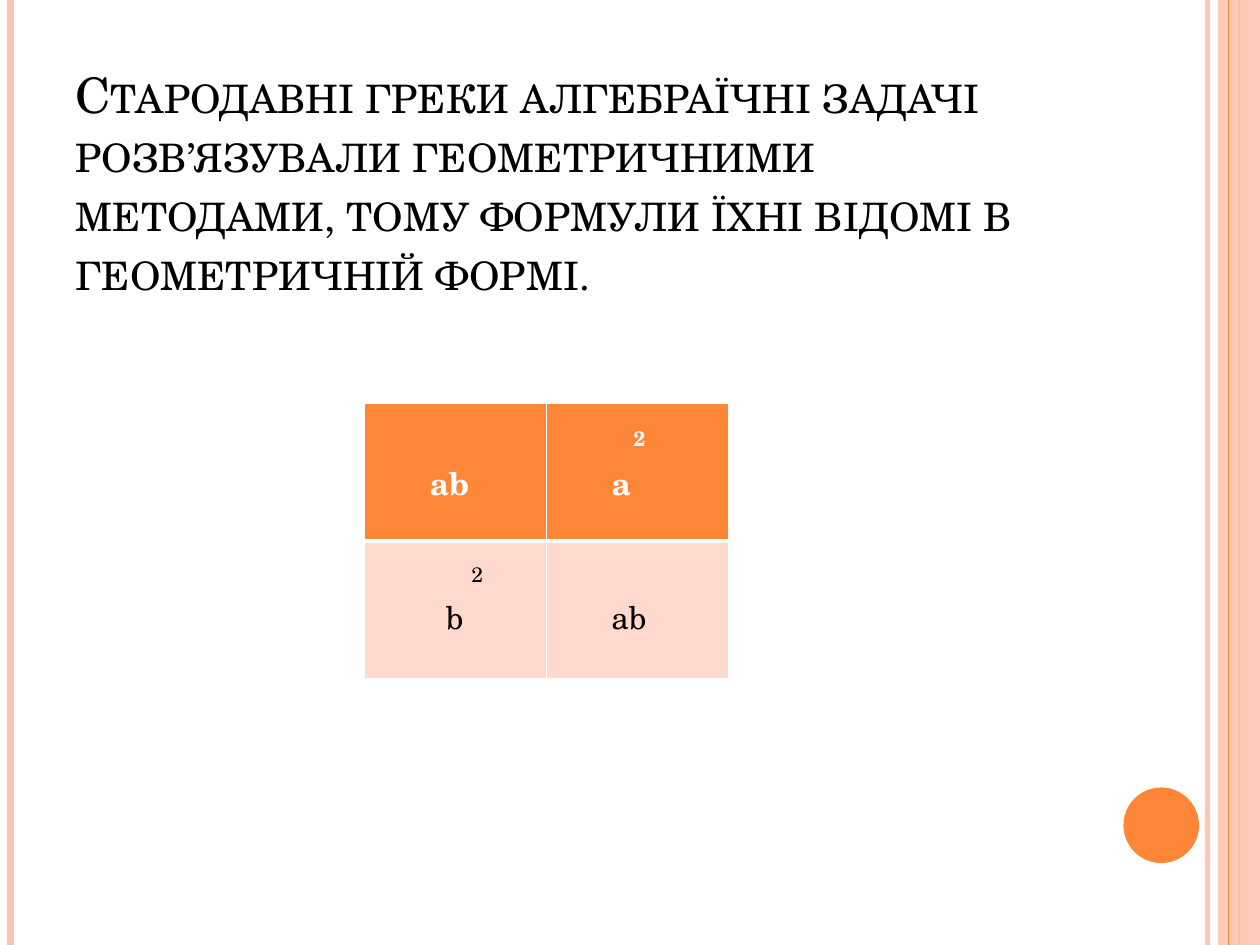
from dataclasses import dataclass

from lxml.etree import SubElement
from pptx import Presentation
from pptx.dml.color import RGBColor
from pptx.enum.shapes import MSO_CONNECTOR as Connector, MSO_SHAPE as Shape
from pptx.enum.text import MSO_ANCHOR as Anchor, MSO_AUTO_SIZE as AutoSize, PP_ALIGN as Align
from pptx.oxml.ns import qn
from pptx.util import Pt

FONT = "TeX Gyre Schola"
WIDTH, HEIGHT = 720, 540
COLORS = {"orange": "FE8637", "peach": "FEC3AE", "pale": "FFD9CE",
          "white": "FFFFFF", "black": "000000"}


@dataclass
class Stripe:
    x: float
    width: float
    color: str
    alpha: int = 100


@dataclass
class Line:
    text: str
    indent: float
    size: float = 18
    before: float = 0


@dataclass
class Area:
    """One cell of the geometric square."""
    lines: list[Line]
    top: float


def rgb(name: str) -> RGBColor:
    return RGBColor.from_string(COLORS[name])


def set_alpha(element, percent: int) -> None:
    color = next(element.iter(qn("a:srgbClr")))
    SubElement(color, qn("a:alpha"), val=str(percent * 1000))


def add_stripe(slide, stripe: Stripe) -> None:
    s = slide.shapes.add_connector(Connector.STRAIGHT, Pt(stripe.x), 0, Pt(stripe.x), Pt(HEIGHT))
    s.line.width = Pt(stripe.width)
    s.line.color.rgb = rgb(stripe.color)
    if stripe.alpha < 100:
        set_alpha(s.line._ln, stripe.alpha)
    SubElement(s._element.spPr, qn("a:effectLst"))


def add_solid(slide, kind, x: float, y: float, w: float, h: float, color: str):
    s = slide.shapes.add_shape(kind, Pt(x), Pt(y), Pt(w), Pt(h))
    s.shadow.inherit = False
    s.fill.solid()
    s.fill.fore_color.rgb = rgb(color)
    s.line.fill.background()
    return s


def add_run(p, text: str, size: float, color: str, bold: bool = False):
    r = p.add_run()
    r.text = text
    r.font.name, r.font.size, r.font.bold = FONT, Pt(size), bold
    r.font.color.rgb = rgb(color)
    return r


def set_borders(cell, top: float, bottom: float) -> None:
    tc_pr = cell._tc.get_or_add_tcPr()
    sides = {"lnL": 1, "lnR": 1, "lnT": top, "lnB": bottom}
    for i, (side, width) in enumerate(sides.items()):
        ln = tc_pr.makeelement(qn(f"a:{side}"), {"w": str(Pt(width))})
        fill = SubElement(ln, qn("a:solidFill"))
        SubElement(fill, qn("a:srgbClr"), val=COLORS["white"])
        tc_pr.insert(i, ln)


def fill_cell(cell, area: Area, header: bool) -> None:
    cell.fill.solid()
    cell.fill.fore_color.rgb = rgb("orange" if header else "pale")
    set_borders(cell, top=1 if header else 3, bottom=3 if header else 1)
    cell.margin_top = Pt(area.top)
    tf = cell.text_frame
    for i, line in enumerate(area.lines):
        p = tf.add_paragraph() if i else tf.paragraphs[0]
        p._p.get_or_add_pPr().set("marL", str(Pt(line.indent)))
        if line.before:
            p.space_before = Pt(line.before)
        add_run(p, line.text, line.size, "white" if header else "black", header)


def main() -> None:
    prs = Presentation()
    prs.slide_width, prs.slide_height = Pt(WIDTH), Pt(HEIGHT)
    slide = prs.slides.add_slide(prs.slide_layouts[5])

    # Side stripes, right band and corner disc
    for stripe in (Stripe(690, 3, "peach", 93), Stripe(6, 4.5, "peach"),
                   Stripe(708, 1.5, "orange")):
        add_stripe(slide, stripe)
    band = add_solid(slide, Shape.RECTANGLE, 696, 0, 24, HEIGHT, "peach")
    set_alpha(band._element.spPr, 87)
    add_stripe(slide, Stripe(702, 0.75, "orange"))
    add_solid(slide, Shape.OVAL, 642, 450, 43.2, 43.2, "orange")

    # Title
    title = slide.shapes.title
    title.left, title.top, title.width, title.height = Pt(36), Pt(21.6), Pt(588), Pt(220.3)
    tf = title.text_frame
    tf.auto_size, tf.word_wrap = AutoSize.NONE, True
    tf.vertical_anchor, tf.margin_bottom = Anchor.BOTTOM, Pt(70.4)
    p = tf.paragraphs[0]
    p.alignment = Align.LEFT
    r = add_run(p, "Стародавні греки алгебраїчні задачі розв’язували геометричними "
                   "методами, тому формули їхні відомі в геометричній формі.", 28, "black")
    r.font._element.set("cap", "small")

    # Square of areas: exponents stand on their own raised line
    areas = [
        [Area([Line("ab", 30)], 31.6),
         Area([Line("2", 42.3, 12), Line("a", 30, before=2.6)], 10.4)],
        [Area([Line("2", 53.7, 12), Line("b", 39.2, before=2.3)], 10.2),
         Area([Line("ab", 29.8)], 30.4)],
    ]
    table = slide.shapes.add_table(2, 2, Pt(208.4), Pt(230.6), Pt(208), Pt(157)).table
    table.horz_banding = False
    for i, row in enumerate(areas):
        for j, area in enumerate(row):
            fill_cell(table.cell(i, j), area, header=i == 0)

    prs.save("out.pptx")


if __name__ == "__main__":
    main()
